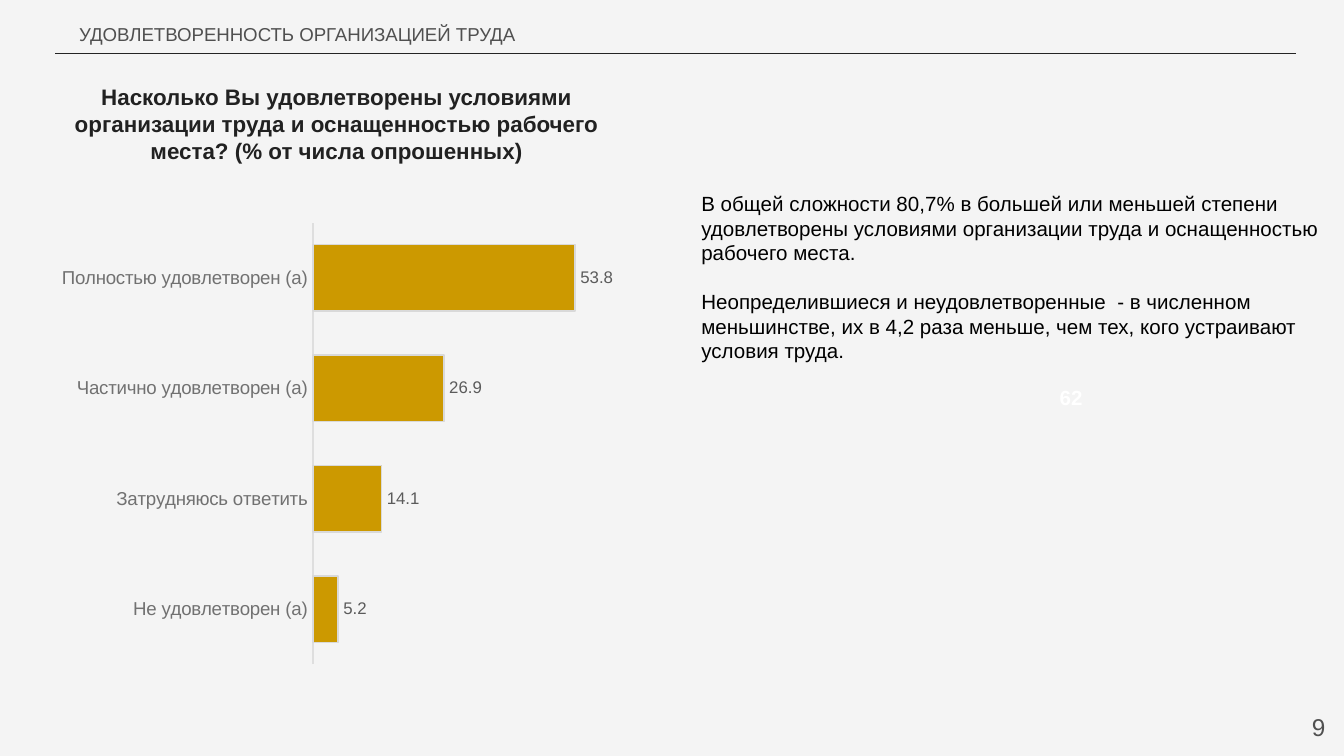
from dataclasses import dataclass

from lxml import etree
from pptx import Presentation
from pptx import util as u
from pptx.chart.data import CategoryChartData
from pptx.dml.color import RGBColor
from pptx.enum import chart as ch, text
from pptx.oxml import parse_xml
from pptx.oxml.ns import nsdecls, qn


@dataclass(frozen=True)
class Theme:
    font: str = "Arial"
    background: str = "F4F4F4"
    rule: str = "242424"
    heading: str = "212121"
    muted: str = "505050"
    body: str = "000000"
    white: str = "FFFFFF"
    bar: str = "CC9900"
    bar_edge: str = "D9D9D9"
    axis: str = "DEDEDE"
    category: str = "717171"
    value: str = "5B5B5B"
    page_size: float = 13
    heading_size: float = 12
    body_size: float = 11
    small_size: float = 10
    value_size: float = 9
    hairline: float = 0.75


THEME = Theme()
WIDTH = u.Inches(10)
HEIGHT = WIDTH * 9 // 16

ANSWERS = {
    "Не удовлетворен (а)": 5.2,
    "Затрудняюсь ответить": 14.1,
    "Частично удовлетворен (а)": 26.9,
    "Полностью удовлетворен (а)": 53.8,
}
CONCLUSIONS = [
    "В общей сложности 80,7% в большей или меньшей степени удовлетворены "
    "условиями организации труда и оснащенностью рабочего места.",
    "Неопределившиеся и неудовлетворенные  - в численном меньшинстве, "
    "их в 4,2 раза меньше, чем тех, кого устраивают условия труда.",
]


def rgb(color):
    return RGBColor.from_string(color)


def area(left, top, width, height):
    across, down = WIDTH / 100, HEIGHT / 100
    return int(left * across), int(top * down), int(width * across), int(height * down)


def style_font(font, size, color, bold=False):
    font.name, font.size, font.bold = THEME.font, u.Pt(size), bold
    font.color.rgb = rgb(color)


def style_line(line, color):
    line.color.rgb = rgb(color)
    line.width = u.Pt(THEME.hairline)


def add_text(slide, paragraphs, place, size, color, bold=False,
             align=text.PP_ALIGN.LEFT, anchor=text.MSO_ANCHOR.TOP,
             insets=(0.1, 0.1, 0.1, 0.1), gap=0):
    frame = slide.shapes.add_textbox(*area(*place)).text_frame
    frame.word_wrap = True
    frame.vertical_anchor = anchor
    (frame.margin_left, frame.margin_top,
     frame.margin_right, frame.margin_bottom) = map(u.Inches, insets)
    frame.text = "\n".join(paragraphs)
    for index, paragraph in enumerate(frame.paragraphs):
        paragraph.alignment = align
        paragraph.space_before = u.Pt(gap if index else 0)
        style_font(paragraph.runs[0].font, size, color, bold)


def add_rule(slide, left, right, height):
    x, y, length, _ = area(left, height, right - left, 0)
    rule = slide.shapes.add_connector(1, x, y, x + length, y)
    style_line(rule.line, THEME.rule)
    etree.SubElement(rule._element.spPr, qn("a:effectLst"))


def set_plot_area(chart, **percents):
    settings = "".join(f'<c:{side}Mode val="edge"/>' for side in "xy")
    settings += "".join(f'<c:{side} val="{percent / 100}"/>'
                        for side, percent in percents.items())
    plot_area = chart._chartSpace.chart.plotArea
    for previous in plot_area.findall(qn("c:layout")):
        plot_area.remove(previous)
    plot_area.insert(0, parse_xml(
        f'<c:layout {nsdecls("c")}><c:manualLayout>'
        f'<c:layoutTarget val="inner"/>{settings}</c:manualLayout></c:layout>'))


def add_answers_chart(slide, place):
    data = CategoryChartData()
    data.categories = list(ANSWERS)
    data.add_series("Series 1", list(ANSWERS.values()))
    chart = slide.shapes.add_chart(
        ch.XL_CHART_TYPE.BAR_CLUSTERED, *area(*place), data).chart
    chart.has_title = chart.has_legend = False
    style_font(chart.font, THEME.small_size, THEME.rule)
    set_plot_area(chart, x=46.6, y=9, w=48.6, h=90.3)

    answers = chart.category_axis
    answers.major_tick_mark = answers.minor_tick_mark = ch.XL_TICK_MARK.NONE
    style_font(answers.tick_labels.font, THEME.small_size, THEME.category)
    style_line(answers.format.line, THEME.axis)
    shares = chart.value_axis
    shares.visible = shares.has_major_gridlines = False
    shares.minimum_scale, shares.maximum_scale = 0, 60

    plot = chart.plots[0]
    plot.gap_width, plot.vary_by_categories = 66, False
    bars = plot.series[0]
    bars.format.fill.solid()
    bars.format.fill.fore_color.rgb = rgb(THEME.bar)
    style_line(bars.format.line, THEME.bar_edge)
    labels = bars.data_labels
    labels.show_value = True
    labels.position = ch.XL_LABEL_POSITION.OUTSIDE_END
    style_font(labels.font, THEME.value_size, THEME.value)


def main():
    deck = Presentation()
    deck.slide_width, deck.slide_height = WIDTH, HEIGHT
    slide = deck.slides.add_slide(deck.slide_layouts[6])
    slide.background.fill.solid()
    slide.background.fill.fore_color.rgb = rgb(THEME.background)

    add_rule(slide, 4.1, 96.4, 7.11)
    add_text(slide, ["9"], (93.6, 92.27, 6, 7.64), THEME.page_size, THEME.muted,
             align=text.PP_ALIGN.RIGHT, anchor=text.MSO_ANCHOR.MIDDLE)
    add_text(slide, ["Насколько Вы удовлетворены условиями организации труда и "
                     "оснащенностью рабочего места? (% от числа опрошенных)"],
             (3, 9.24, 44.1, 14.4), THEME.heading_size, THEME.heading,
             bold=True, align=text.PP_ALIGN.CENTER)
    add_text(slide, ["УДОВЛЕТВОРЕННОСТЬ ОРГАНИЗАЦИЕЙ ТРУДА"],
             (4.9, 1.5, 40.2, 6.58), THEME.small_size, THEME.muted)
    add_answers_chart(slide, (2.4, 23.64, 44.8, 64.71))
    add_text(slide, CONCLUSIONS, (51.2, 8, 48.4, 44.62), THEME.body_size,
             THEME.body, insets=(0.1, 0.97, 0.1, 0.05), gap=13)
    add_text(slide, ["62"], (77.7, 50.1, 4, 5), THEME.body_size, THEME.white,
             bold=True, align=text.PP_ALIGN.CENTER,
             anchor=text.MSO_ANCHOR.MIDDLE, insets=(0, 0, 0, 0))
    deck.save("out.pptx")


if __name__ == "__main__":
    main()
